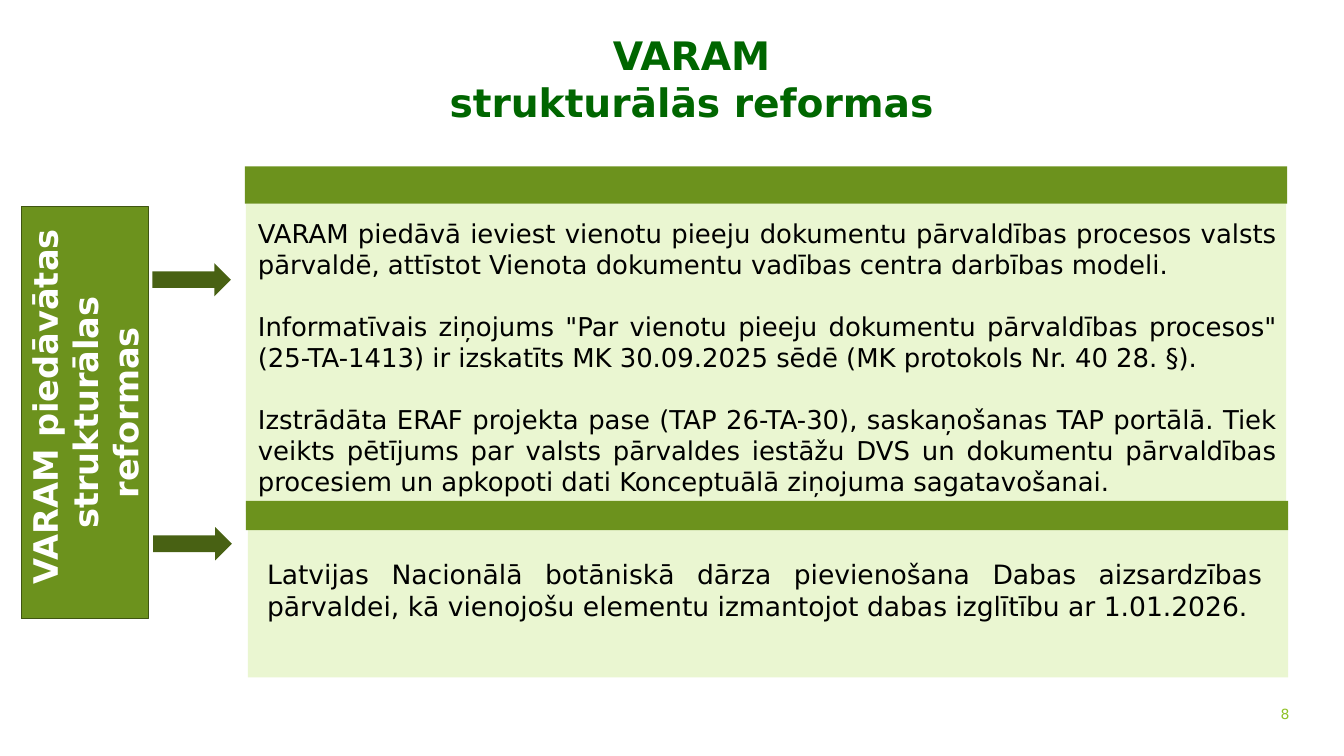
from dataclasses import dataclass, field
from typing import Any

from pptx import Presentation
from pptx.dml.color import RGBColor
from pptx.enum.shapes import MSO_SHAPE as Preset
from pptx.enum.text import MSO_ANCHOR as Anchor, PP_ALIGN as Align
from pptx.util import Inches, Pt

WIDTH, HEIGHT = Inches(13.33), Inches(7.5)
FONT = "DejaVu Sans"
LEAF, PALE, MOSS, EDGE = "6C921D", "EAF6D1", "486113", "3F5511"
TITLE_GREEN, LIME, WHITE, BLACK = "006600", "90C226", "FFFFFF", "000000"


@dataclass(frozen=True)
class Area:
    left: float
    top: float
    width: float
    height: float

    def emu(self) -> tuple[int, int, int, int]:
        return (round(WIDTH * self.left / 100), round(HEIGHT * self.top / 100),
                round(WIDTH * self.width / 100), round(HEIGHT * self.height / 100))


@dataclass(frozen=True)
class Block:
    area: Area
    fill: str
    preset: Preset = Preset.RECTANGLE


@dataclass(frozen=True)
class Passage:
    area: Area
    paragraphs: tuple[str, ...]
    size: float
    color: str = BLACK
    bold: bool = False
    align: Align = Align.JUSTIFY
    gap: float = 0
    frame: dict[str, Any] = field(default_factory=dict)


def rgb(value: str) -> RGBColor:
    return RGBColor.from_string(value)


def apply(target: Any, values: dict[str, Any]) -> None:
    for name, value in values.items():
        setattr(target, name, value)


def draw_block(slide: Any, block: Block) -> Any:
    shape = slide.shapes.add_shape(block.preset, *block.area.emu())
    shape.shadow.inherit = False
    shape.fill.solid()
    shape.fill.fore_color.rgb = rgb(block.fill)
    shape.line.fill.background()
    return shape


def write(frame: Any, passage: Passage) -> None:
    apply(frame, {"word_wrap": True} | passage.frame)
    for index, wording in enumerate(passage.paragraphs):
        paragraph = frame.paragraphs[0] if index == 0 else frame.add_paragraph()
        apply(paragraph, {"alignment": passage.align})
        if index and passage.gap:
            paragraph.space_before = Pt(passage.gap)
        run = paragraph.add_run()
        run.text = wording
        apply(run.font, {"name": FONT, "size": Pt(passage.size), "bold": passage.bold})
        run.font.color.rgb = rgb(passage.color)


def draw_passage(slide: Any, passage: Passage) -> Any:
    box = slide.shapes.add_textbox(*passage.area.emu())
    write(box.text_frame, passage)
    return box.text_frame


SIDE_AREA = Area(1.58, 27.33, 9.45, 54.53)
SIDE_LABEL = Passage(SIDE_AREA, (" VARAM piedāvātas strukturālas reformas",), 24, WHITE, True,
                     Align.CENTER, frame={"vertical_anchor": Anchor.MIDDLE})
TITLE = Passage(Area(12.75, 3.47, 79.43, 13.87), ("VARAM", "strukturālās reformas"),
                28, TITLE_GREEN, True, Align.CENTER)
BLOCKS = (
    Block(Area(11.33, 34.8, 5.85, 4.4), MOSS, Preset.RIGHT_ARROW),
    Block(Area(18.3, 26.93, 77.4, 40.8), PALE),
    Block(Area(18.23, 22, 77.55, 4.93), LEAF),
    Block(Area(18.45, 69.6, 77.4, 20), PALE),
    Block(Area(18.3, 66.27, 77.55, 3.87), LEAF),
    Block(Area(11.4, 69.73, 5.85, 4.4), MOSS, Preset.RIGHT_ARROW),
)
PASSAGES = (
    Passage(Area(18.45, 28.13, 77.25, 38.67), (
        "VARAM piedāvā ieviest vienotu pieeju dokumentu pārvaldības procesos valsts "
        "pārvaldē, attīstot Vienota dokumentu vadības centra darbības modeli.",
        "Informatīvais ziņojums \"Par vienotu pieeju dokumentu pārvaldības procesos\" "
        "(25-TA-1413) ir izskatīts MK 30.09.2025 sēdē (MK protokols Nr. 40 28. §).",
        "Izstrādāta ERAF projekta pase (TAP 26-TA-30), saskaņošanas TAP portālā. Tiek "
        "veikts pētījums par valsts pārvaldes iestāžu DVS un dokumentu pārvaldības "
        "procesiem un apkopoti dati Konceptuālā ziņojuma sagatavošanai.",
    ), 18.5, gap=22),
    Passage(Area(19.13, 73.2, 75.53, 9.87), (
        "Latvijas Nacionālā botāniskā dārza pievienošana Dabas aizsardzības "
        "pārvaldei, kā vienojošu elementu izmantojot dabas izglītību ar 1.01.2026.",
    ), 19),
    Passage(Area(91.95, 92.27, 4.73, 4.4), ("8",), 10, LIME, align=Align.RIGHT,
            frame={"vertical_anchor": Anchor.MIDDLE}),
)


def main() -> None:
    deck = Presentation()
    apply(deck, {"slide_width": WIDTH, "slide_height": HEIGHT})
    slide = deck.slides.add_slide(deck.slide_layouts[6])

    side = draw_block(slide, Block(SIDE_AREA, LEAF))
    side.line.color.rgb = rgb(EDGE)
    side.line.width = Pt(0.85)
    write(side.text_frame, SIDE_LABEL)
    side.text_frame._txBody.bodyPr.set("vert", "vert270")

    for block in BLOCKS:
        draw_block(slide, block)
    heading = draw_passage(slide, TITLE)
    heading.paragraphs[0]._p.get_or_add_pPr().set("marR", str(Inches(0.27)))
    for passage in PASSAGES:
        draw_passage(slide, passage)

    deck.save("out.pptx")


if __name__ == "__main__":
    main()
